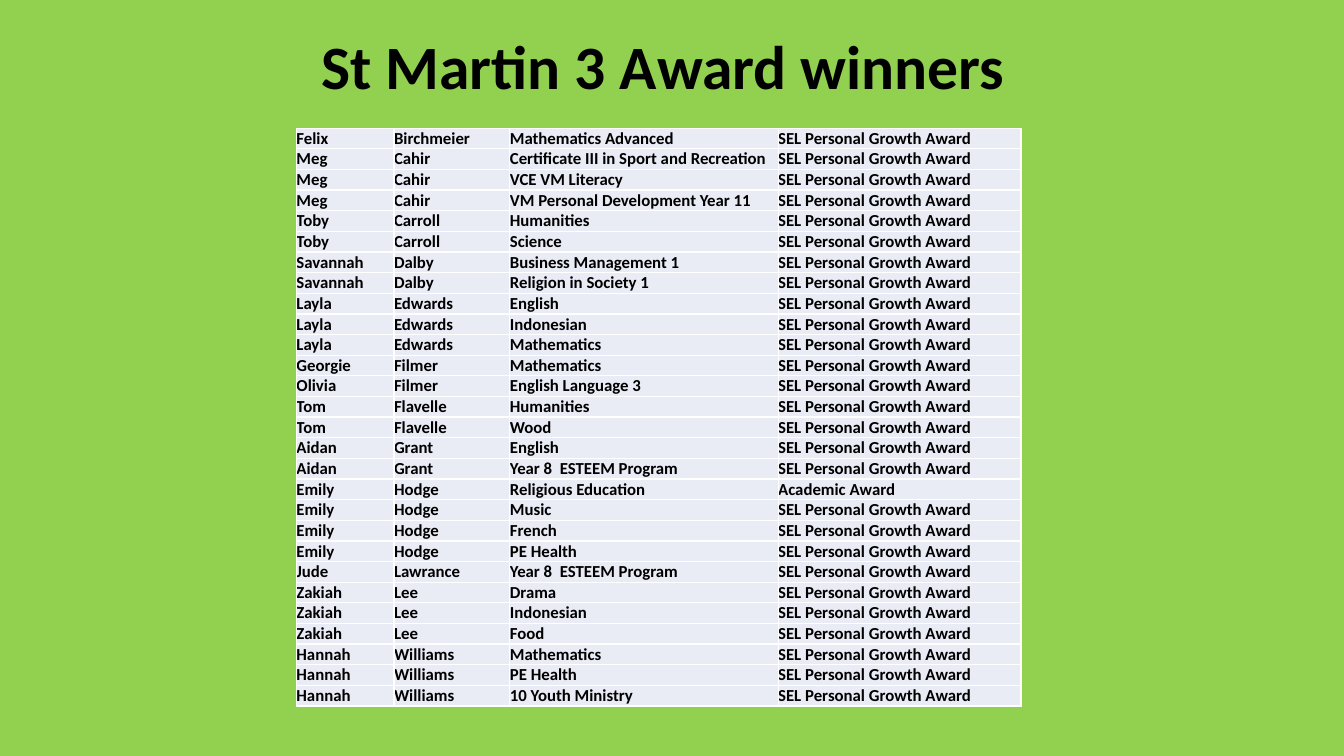
from typing import NamedTuple

from lxml import etree
from pptx import Presentation
from pptx import util as u
from pptx.dml.color import RGBColor
from pptx.enum import text
from pptx.oxml import ns

GREEN = RGBColor(0x92, 0xD0, 0x50)
PALE_BLUE = RGBColor(0xE9, 0xEB, 0xF5)
BLACK = RGBColor(0, 0, 0)
WHITE = RGBColor(255, 255, 255)
FONT = "Calibri"
COLUMN_WIDTHS = (2.46, 2.92, 6.76, 6.12)
ROW_HEIGHT = 0.52
GROWTH = "SEL Personal Growth Award"


class Award(NamedTuple):
    first_name: str
    surname: str
    subject: str
    prize: str = GROWTH


AWARDS = (
    Award("Felix", "Birchmeier", "Mathematics Advanced"),
    Award("Meg", "Cahir", "Certificate III in Sport and Recreation"),
    Award("Meg", "Cahir", "VCE VM Literacy"),
    Award("Meg", "Cahir", "VM Personal Development Year 11"),
    Award("Toby", "Carroll", "Humanities"),
    Award("Toby", "Carroll", "Science"),
    Award("Savannah", "Dalby", "Business Management 1"),
    Award("Savannah", "Dalby", "Religion in Society 1"),
    Award("Layla", "Edwards", "English"),
    Award("Layla", "Edwards", "Indonesian"),
    Award("Layla", "Edwards", "Mathematics"),
    Award("Georgie", "Filmer", "Mathematics"),
    Award("Olivia", "Filmer", "English Language 3"),
    Award("Tom", "Flavelle", "Humanities"),
    Award("Tom", "Flavelle", "Wood"),
    Award("Aidan", "Grant", "English"),
    Award("Aidan", "Grant", "Year 8  ESTEEM Program"),
    Award("Emily", "Hodge", "Religious Education", "Academic Award"),
    Award("Emily", "Hodge", "Music"),
    Award("Emily", "Hodge", "French"),
    Award("Emily", "Hodge", "PE Health"),
    Award("Jude", "Lawrance", "Year 8  ESTEEM Program"),
    Award("Zakiah", "Lee", "Drama"),
    Award("Zakiah", "Lee", "Indonesian"),
    Award("Zakiah", "Lee", "Food"),
    Award("Hannah", "Williams", "Mathematics"),
    Award("Hannah", "Williams", "PE Health"),
    Award("Hannah", "Williams", "10 Youth Ministry"),
)


def add_bold_run(paragraph, wording: str, size: float) -> None:
    run = paragraph.add_run()
    run.text = wording
    run.font.name = FONT
    run.font.size = u.Pt(size)
    run.font.bold = True
    run.font.color.rgb = BLACK


def add_borders(cell) -> None:
    properties = cell._tc.get_or_add_tcPr()
    for position, side in enumerate(("lnL", "lnR", "lnT", "lnB")):
        line = etree.Element(ns.qn(f"a:{side}"), w=str(u.Pt(1)))
        fill = etree.SubElement(line, ns.qn("a:solidFill"))
        etree.SubElement(fill, ns.qn("a:srgbClr"), val=str(WHITE))
        properties.insert(position, line)


def fill_cell(cell, wording: str) -> None:
    cell.fill.solid()
    cell.fill.fore_color.rgb = PALE_BLUE
    cell.margin_left = cell.margin_right = cell.margin_top = cell.margin_bottom = 0
    cell.vertical_anchor = text.MSO_ANCHOR.BOTTOM
    add_bold_run(cell.text_frame.paragraphs[0], wording, 12)
    add_borders(cell)


def format_title(title) -> None:
    title.left, title.top = u.Cm(7.47), u.Cm(0.5)
    title.width, title.height = u.Cm(18.5), u.Cm(2.52)
    frame = title.text_frame
    frame.auto_size = text.MSO_AUTO_SIZE.NONE
    frame.word_wrap = True
    frame.vertical_anchor = text.MSO_ANCHOR.MIDDLE
    paragraph = frame.paragraphs[0]
    paragraph.alignment = text.PP_ALIGN.CENTER
    paragraph.line_spacing = 0.9
    add_bold_run(paragraph, "St Martin 3 Award winners", 44)


def add_award_table(slide, awards: tuple[Award, ...]) -> None:
    table = slide.shapes.add_table(
        len(awards), len(COLUMN_WIDTHS), u.Cm(7.47), u.Cm(3.23),
        u.Cm(sum(COLUMN_WIDTHS)), u.Cm(ROW_HEIGHT * len(awards)),
    ).table
    table.first_row = False
    table.horz_banding = False
    for column, width in zip(table.columns, COLUMN_WIDTHS):
        column.width = u.Cm(width)
    for row, award in zip(table.rows, awards):
        row.height = u.Cm(ROW_HEIGHT)
        for cell, wording in zip(row.cells, award):
            fill_cell(cell, wording)


def main() -> None:
    presentation = Presentation()
    presentation.slide_width = u.Cm(33.87)
    presentation.slide_height = u.Cm(19.05)
    slide = presentation.slides.add_slide(presentation.slide_layouts[5])
    slide.background.fill.solid()
    slide.background.fill.fore_color.rgb = GREEN
    format_title(slide.shapes.title)
    add_award_table(slide, AWARDS)
    presentation.save("out.pptx")


if __name__ == "__main__":
    main()
